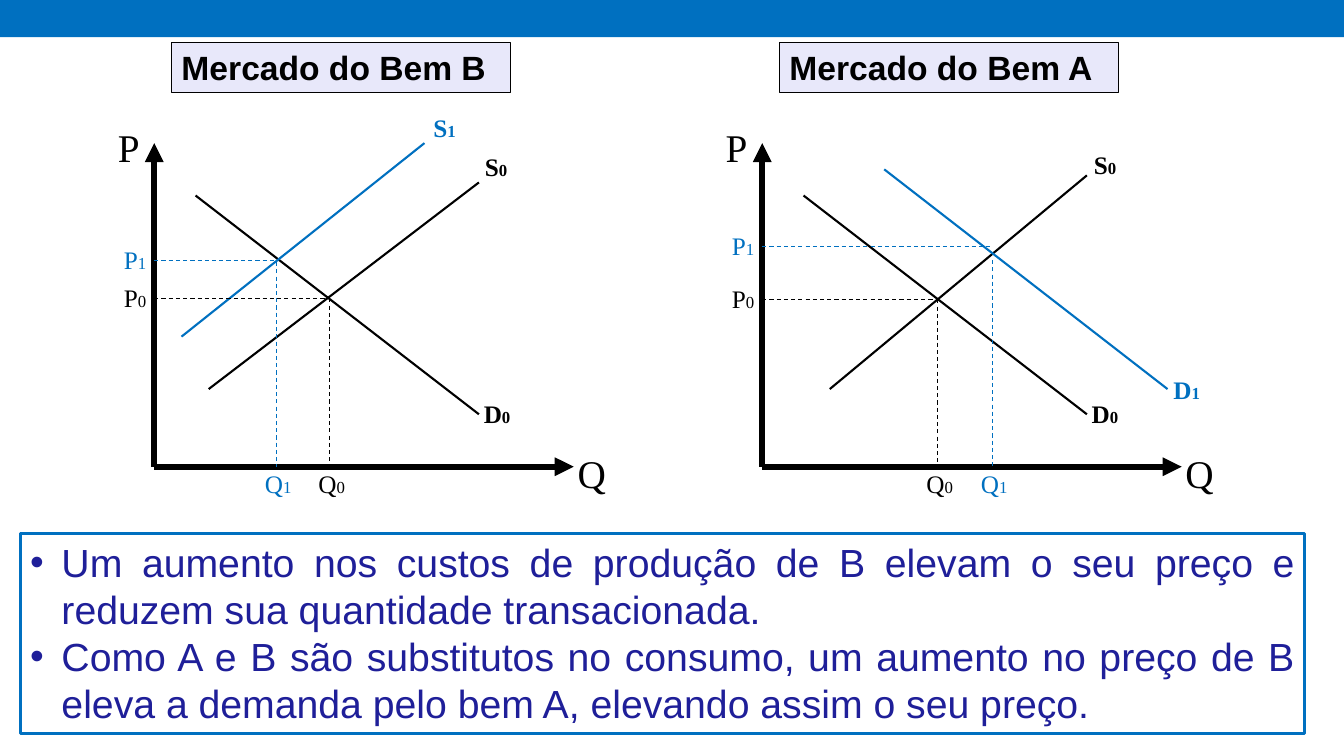
from lxml import etree
from pptx import Presentation
from pptx import util as u
from pptx.dml.color import RGBColor
from pptx.enum import dml, shapes, text
from pptx.oxml.ns import qn

BLACK, BLUE, NAVY, LILAC = "000000", "0070C0", "1F1F99", "E8E8FA"
SERIF, SANS = "Times New Roman", "Arial"
WIDTH, HEIGHT = 13.33, 7.5
ORIGIN_Y = 4.63

# Lengths are inches right of and above the origin of the axes.
# A curve is (name, colour, start, end, label corner).
# An equilibrium is (index, colour, quantity, price, top of the quantity guide).
DEMAND_0 = ("D0", BLACK, (0.41, 2.69), (3.22, 0.52), (3.17, 0.73))
MARKETS = [
    {"title": "Mercado do Bem B", "origin": 1.53,
     "curves": [DEMAND_0,
                ("S0", BLACK, (0.54, 0.77), (3.22, 2.82), (3.18, 3.18)),
                ("S1", BLUE, (0.27, 1.29), (2.68, 3.21), (2.67, 3.56))],
     "equilibria": [("0", BLACK, 1.74, 1.67, 1.67), ("1", BLUE, 1.21, 2.05, 2.03)]},
    {"title": "Mercado do Bem A", "origin": 7.56,
     "curves": [DEMAND_0,
                ("S0", BLACK, (0.67, 0.77), (3.22, 2.89), (3.19, 3.2)),
                ("D1", BLUE, (1.21, 2.95), (4.02, 0.77), (3.98, 0.97))],
     "equilibria": [("0", BLACK, 1.74, 1.66, 1.66), ("1", BLUE, 2.28, 2.18, 2.05)]},
]
CONCLUSIONS = [
    "Um aumento nos custos de produção de B elevam o seu preço e reduzem sua "
    "quantidade transacionada.",
    "Como A e B são substitutos no consumo, um aumento no preço de B eleva a "
    "demanda pelo bem A, elevando assim o seu preço.",
]


def color(value):
    return RGBColor.from_string(value)


def format_run(run, size, font, value, bold=False):
    run.font.size, run.font.name, run.font.bold = u.Pt(size), font, bold
    run.font.color.rgb = color(value)


def place(shape, left, top, width, height):
    shape.left, shape.top = u.Inches(left), u.Inches(top)
    shape.width, shape.height = u.Inches(width), u.Inches(height)


def frame_placeholder(shape, box, line, width):
    """Moves a placeholder into its box and gives it a border."""
    place(shape, *box)
    shape.line.color.rgb = color(line)
    shape.line.width = u.Pt(width)
    shape.text_frame.auto_size = text.MSO_AUTO_SIZE.NONE
    shape.text_frame.vertical_anchor = text.MSO_ANCHOR.TOP


def format_paragraph(paragraph):
    paragraph.alignment = text.PP_ALIGN.JUSTIFY
    paragraph.space_before = u.Pt(0)
    paragraph.line_spacing = 1.0


def add_line(slide, start, end, value, width, dashed=False, arrow=False):
    points = [u.Inches(length) for length in (*start, *end)]
    connector = slide.shapes.add_connector(shapes.MSO_CONNECTOR.STRAIGHT, *points)
    connector.line.color.rgb = color(value)
    connector.line.width = u.Pt(width)
    if dashed:
        connector.line.dash_style = dml.MSO_LINE.DASH
    properties = connector._element.spPr
    if arrow:
        etree.SubElement(properties.find(qn("a:ln")), qn("a:tailEnd"), type="triangle")
    etree.SubElement(properties, qn("a:effectLst"))


def add_label(slide, corner, name, value, size=18, bold=False):
    """Writes a letter, followed by its index in smaller type."""
    left, top = (u.Inches(length) for length in corner)
    box = slide.shapes.add_textbox(left, top, u.Inches(0.8), u.Inches(0.4))
    box.text_frame.word_wrap = True
    paragraph = box.text_frame.paragraphs[0]
    for character in name:
        run = paragraph.add_run()
        run.text = character
        format_run(run, 12 if character.isdigit() else size, SERIF, value, bold)


def add_top_bar(slide, height):
    bar = slide.shapes.add_shape(shapes.MSO_SHAPE.RECTANGLE, 0, 0,
                                 u.Inches(WIDTH), u.Inches(height))
    bar.shadow.inherit = False
    bar.fill.solid()
    bar.fill.fore_color.rgb = color(BLUE)
    bar.line.fill.background()


def fill_market_title(shape, title, box):
    frame_placeholder(shape, box, BLACK, 0.75)
    shape.fill.solid()
    shape.fill.fore_color.rgb = color(LILAC)
    shape.text_frame.text = title
    paragraph = shape.text_frame.paragraphs[0]
    format_paragraph(paragraph)
    format_run(paragraph.runs[0], 24, SANS, BLACK, True)


def add_market(slide, market):
    """Draws axes, curves and equilibria around the market's origin."""
    def at(point):
        return market["origin"] + point[0], ORIGIN_Y - point[1]

    # Axes
    for name, tip, corner in (("P", (0, 3.21), (-0.46, 3.46)),
                              ("Q", (4.16, 0), (4.1, 0.22))):
        add_line(slide, at((0, 0)), at(tip), BLACK, 4.5, arrow=True)
        add_label(slide, at(corner), name, BLACK, 28)
    # Supply and demand
    for name, value, start, end, corner in market["curves"]:
        add_line(slide, at(start), at(end), value, 1.5)
        add_label(slide, at(corner), name, value, bold=True)
    # Price and quantity guides
    for index, value, quantity, price, top in market["equilibria"]:
        add_line(slide, at((0, price)), at((quantity, price)), value, 0.75, dashed=True)
        add_line(slide, at((quantity, top)), at((quantity, 0)), value, 0.75, dashed=True)
        add_label(slide, at((-0.4, price + 0.21)), "P" + index, value)
        add_label(slide, at((quantity - 0.21, 0.03)), "Q" + index, value)


def fill_conclusions(shape, box):
    frame_placeholder(shape, box, BLUE, 2.25)
    shape.text_frame.text = "\n".join(CONCLUSIONS)
    for paragraph in shape.text_frame.paragraphs:
        format_paragraph(paragraph)
        properties = paragraph._p.get_or_add_pPr()
        indent = u.Inches(0.31)
        properties.set("marL", str(indent))
        properties.set("indent", str(-indent))
        etree.SubElement(properties, qn("a:buFont"), typeface=SANS)
        etree.SubElement(properties, qn("a:buChar"), char="•")
        format_run(paragraph.runs[0], 28, SANS, NAVY)


def main():
    presentation = Presentation()
    presentation.slide_width = u.Inches(WIDTH)
    presentation.slide_height = u.Inches(HEIGHT)
    # The comparison layout offers two headings and a list
    slide = presentation.slides.add_slide(presentation.slide_layouts[4])
    holders = {holder.placeholder_format.idx: holder for holder in slide.placeholders}
    for unused in (0, 4):
        holders[unused]._element.getparent().remove(holders[unused]._element)

    add_top_bar(slide, 0.37)
    for market, heading in zip(MARKETS, (holders[1], holders[3])):
        fill_market_title(heading, market["title"],
                          (market["origin"] + 0.17, 0.42, 3.36, 0.5))
        add_market(slide, market)
    fill_conclusions(holders[2], (0.2, 5.29, 12.74, 1.99))
    presentation.save("out.pptx")


if __name__ == "__main__":
    main()
